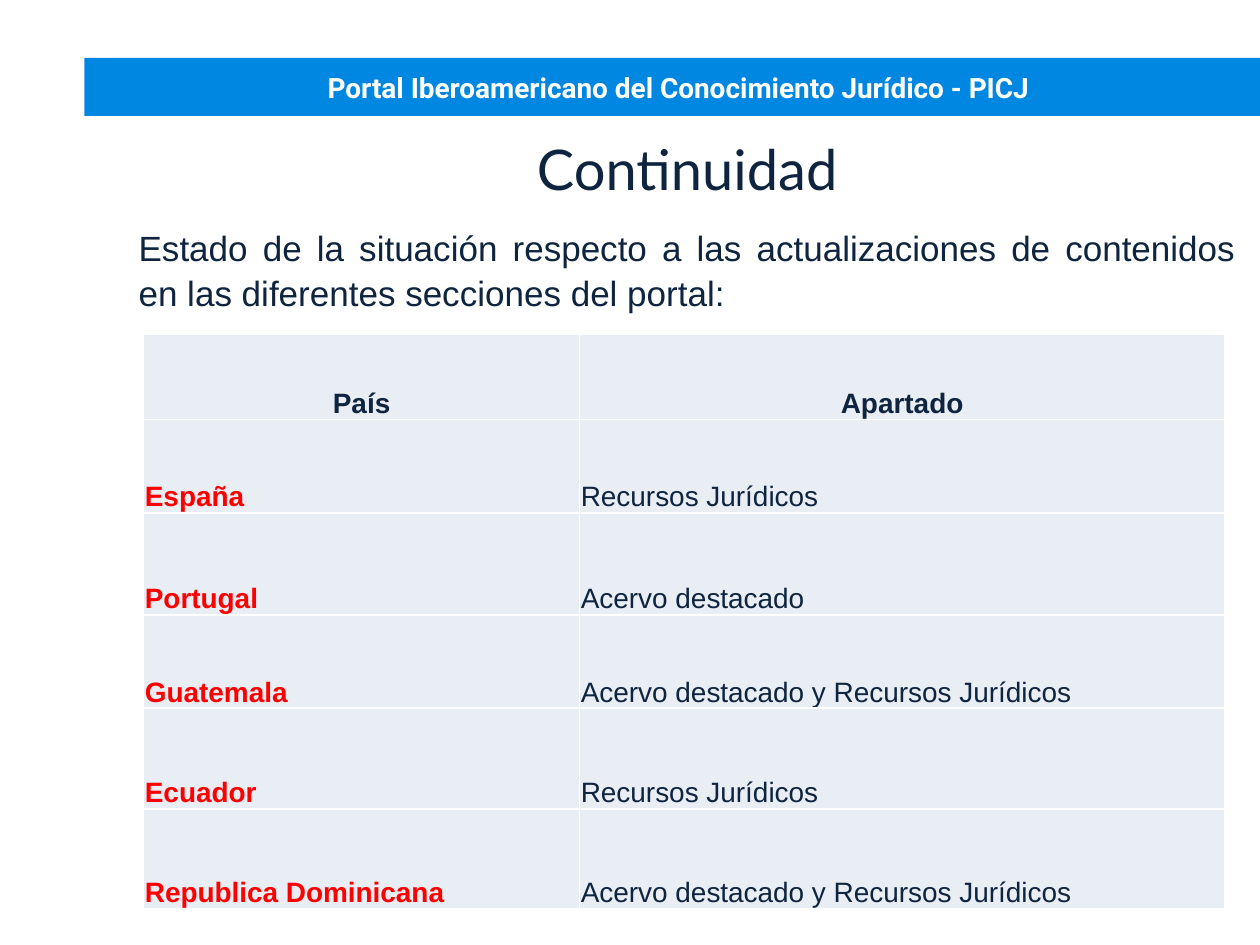
from dataclasses import dataclass

from lxml import etree
from pptx import Presentation
from pptx.dml.color import RGBColor
from pptx.enum import text
from pptx.oxml import ns
from pptx.util import Inches, Pt


@dataclass(frozen=True)
class Theme:
    """Colours, fonts and type sizes of the slide."""
    banner: str = "0087E2"
    white: str = "FFFFFF"
    ink: str = "0F243E"
    accent: str = "FF0000"
    cell: str = "E9EDF4"
    banner_font: str = "Roboto"
    heading_font: str = "Lato"
    body_font: str = "Arial"
    heading_size: int = 32
    intro_size: int = 20
    small_size: int = 16


THEME = Theme()
HEADERS = ("País", "Apartado")
UPDATES = (
    ("España", "Recursos Jurídicos"),
    ("Portugal", "Acervo destacado"),
    ("Guatemala", "Acervo destacado y Recursos Jurídicos"),
    ("Ecuador", "Recursos Jurídicos"),
    ("Republica Dominicana", "Acervo destacado y Recursos Jurídicos"),
)
COLUMN_WIDTHS = (3.46, 5.12)
ROW_HEIGHTS = (0.68, 0.74, 0.81, 0.74, 0.8, 0.79)


def style(para, font, size, color, bold=False, align=text.PP_ALIGN.LEFT):
    """Set the type and alignment of a paragraph."""
    para.alignment = align
    para.font.name = font
    para.font.size = Pt(size)
    para.font.bold = bold
    para.font.color.rgb = RGBColor.from_string(color)


def indent(para, left):
    """Give a paragraph a left margin and no bullet."""
    props = para._p.get_or_add_pPr()
    props.set("marL", str(Inches(left)))
    props.set("indent", "0")
    etree.SubElement(props, ns.qn("a:buNone"))
    para.space_before = Pt(0)


def place(holder, box):
    """Move a placeholder to a box and clear its insets."""
    holder.left, holder.top, holder.width, holder.height = map(Inches, box)
    frame = holder.text_frame
    frame.margin_left = frame.margin_right = 0
    frame.margin_top = frame.margin_bottom = 0
    frame.word_wrap = True
    frame.auto_size = text.MSO_AUTO_SIZE.NONE
    return frame


def add_banner(page, box):
    """Fill the title placeholder as a coloured banner."""
    title = page.shapes.title
    frame = place(title, box)
    frame.vertical_anchor = text.MSO_ANCHOR.MIDDLE
    title.fill.solid()
    title.fill.fore_color.rgb = RGBColor.from_string(THEME.banner)
    para = frame.paragraphs[0]
    para.text = "Portal Iberoamericano del Conocimiento Jurídico - PICJ"
    indent(para, 0.1)
    style(para, THEME.banner_font, THEME.small_size, THEME.white, True,
          text.PP_ALIGN.CENTER)


def add_intro(page, box):
    """Write the heading and the introduction in the body placeholder."""
    frame = place(page.placeholders[1], box)
    frame.vertical_anchor = text.MSO_ANCHOR.TOP
    heading = frame.paragraphs[0]
    heading.text = "Continuidad"
    indent(heading, 0.19)
    style(heading, THEME.heading_font, THEME.heading_size, THEME.ink,
          align=text.PP_ALIGN.CENTER)
    intro = frame.add_paragraph()
    intro.text = ("Estado de la situación respecto a las actualizaciones de "
                  "contenidos en las diferentes secciones del portal:")
    indent(intro, 0.19)
    intro.space_before = Pt(13)
    intro.line_spacing = 1.05
    style(intro, THEME.body_font, THEME.intro_size, THEME.ink,
          align=text.PP_ALIGN.JUSTIFY)


def add_borders(cell):
    """Draw a thin white line on each side of a cell."""
    props = cell._tc.get_or_add_tcPr()
    for side in ("lnL", "lnR", "lnT", "lnB"):
        line = etree.SubElement(props, ns.qn(f"a:{side}"), w=str(Pt(1)))
        fill = etree.SubElement(line, ns.qn("a:solidFill"))
        etree.SubElement(fill, ns.qn("a:srgbClr"), val=THEME.white)


def fill_cell(cell, words, color, bold, align):
    """Write and format one table cell."""
    add_borders(cell)
    cell.fill.solid()
    cell.fill.fore_color.rgb = RGBColor.from_string(THEME.cell)
    cell.margin_left = cell.margin_right = cell.margin_top = Inches(0.01)
    cell.margin_bottom = 0
    cell.vertical_anchor = text.MSO_ANCHOR.BOTTOM
    para = cell.text_frame.paragraphs[0]
    para.text = words
    style(para, THEME.body_font, THEME.small_size, color, bold, align)


def add_updates(page, box):
    """Add the table of countries and updated sections."""
    rows = (HEADERS, *UPDATES)
    table = page.shapes.add_table(len(rows), len(HEADERS), *map(Inches, box)).table
    table.first_row = table.horz_banding = False
    for column, width in zip(table.columns, COLUMN_WIDTHS):
        column.width = Inches(width)
    for row, height in zip(table.rows, ROW_HEIGHTS):
        row.height = Inches(height)
    for r, row in enumerate(rows):
        for c, words in enumerate(row):
            header, country = r == 0, c == 0
            fill_cell(table.cell(r, c), words,
                      THEME.accent if country and not header else THEME.ink,
                      header or country,
                      text.PP_ALIGN.CENTER if header else text.PP_ALIGN.LEFT)


def main():
    """Build and save the slide."""
    deck = Presentation()
    deck.slide_width, deck.slide_height = Inches(10), Inches(7.5)
    page = deck.slides.add_slide(deck.slide_layouts[1])
    add_banner(page, (0.67, 0.46, 9.33, 0.46))
    add_intro(page, (0.91, 1.07, 8.9, 6.14))
    add_updates(page, (1.14, 2.65, sum(COLUMN_WIDTHS), sum(ROW_HEIGHTS)))
    deck.save("out.pptx")


if __name__ == "__main__":
    main()
